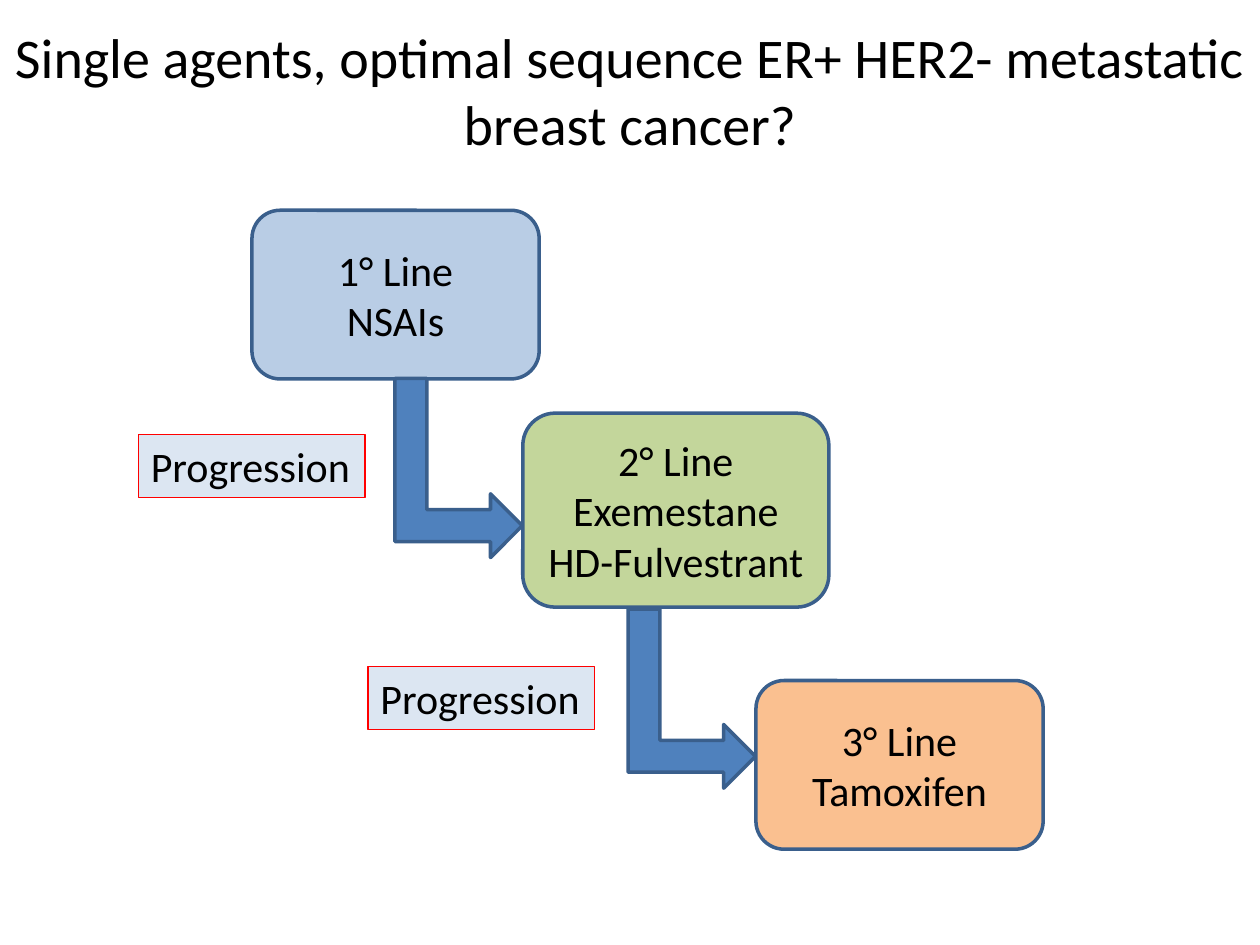
from dataclasses import dataclass

from pptx import Presentation
from pptx.dml.color import RGBColor
from pptx.enum.shapes import MSO_SHAPE
from pptx.enum.text import MSO_ANCHOR, MSO_AUTO_SIZE, PP_ALIGN
from pptx.shapes.autoshape import Shape
from pptx.slide import Slide
from pptx.util import Cm, Pt

OUTLINE = "3A5F8C"


@dataclass
class Area:
    left: float
    top: float
    width: float
    height: float

    def lengths(self) -> list[Cm]:
        return [Cm(value) for value in (self.left, self.top, self.width, self.height)]


@dataclass
class Therapy:
    area: Area
    fill: str
    text: str


THERAPIES = [
    Therapy(Area(5.08, 4.24, 5.79, 3.4), "B9CDE5", "1° Line\nNSAIs"),
    Therapy(Area(10.54, 8.33, 6.17, 3.91), "C3D69B", "2° Line\nExemestane\nHD-Fulvestrant"),
    Therapy(Area(15.24, 13.72, 5.79, 3.4), "FAC090", "3° Line\nTamoxifen"),
]
ARROWS = [Area(7.44, 8.15, 3.61, 2.57), Area(12.14, 12.8, 3.61, 2.57)]
LABELS = [Area(2.79, 8.76, 4.57, 1.27), Area(7.42, 13.44, 4.57, 1.27)]


def color(value: str) -> RGBColor:
    return RGBColor.from_string(value)


def add_box(page: Slide, kind: MSO_SHAPE, area: Area, fill: str,
            line: str = OUTLINE, line_width: float = 2) -> Shape:
    box = page.shapes.add_shape(kind, *area.lengths())
    box.shadow.inherit = False
    box.fill.solid()
    box.fill.fore_color.rgb = color(fill)
    box.line.color.rgb = color(line)
    box.line.width = Pt(line_width)
    return box


def write(box: Shape, text: str, size: int, align: PP_ALIGN, anchor: MSO_ANCHOR) -> None:
    frame = box.text_frame
    frame.text = text
    frame.word_wrap = True
    frame.vertical_anchor = anchor
    for para in frame.paragraphs:
        para.alignment = align
        for span in para.runs:
            span.font.name = "Calibri"
            span.font.size = Pt(size)
            span.font.color.rgb = color("000000")


def add_therapy(page: Slide, therapy: Therapy) -> None:
    box = add_box(page, MSO_SHAPE.ROUNDED_RECTANGLE, therapy.area, therapy.fill)
    write(box, therapy.text, 24, PP_ALIGN.CENTER, MSO_ANCHOR.MIDDLE)


def add_arrow(page: Slide, area: Area) -> None:
    arrow = add_box(page, MSO_SHAPE.BENT_UP_ARROW, area, "4F81BD")
    arrow.rotation = 90


def add_title(page: Slide, area: Area, text: str) -> None:
    box = page.shapes.add_textbox(*area.lengths())
    write(box, text, 32, PP_ALIGN.CENTER, MSO_ANCHOR.TOP)
    box.text_frame.auto_size = MSO_AUTO_SIZE.SHAPE_TO_FIT_TEXT


def add_label(page: Slide, area: Area, text: str) -> None:
    box = add_box(page, MSO_SHAPE.RECTANGLE, area, "DCE6F2", "FF0000", 0.75)
    write(box, text, 24, PP_ALIGN.LEFT, MSO_ANCHOR.TOP)
    box.text_frame.word_wrap = False
    box.text_frame.auto_size = MSO_AUTO_SIZE.SHAPE_TO_FIT_TEXT


def main() -> None:
    deck = Presentation()
    deck.slide_width, deck.slide_height = Cm(25.4), Cm(19.05)
    page = deck.slides.add_slide(deck.slide_layouts[6])

    # Treatment lines and the arrows between them
    for therapy in THERAPIES:
        add_therapy(page, therapy)
    for area in ARROWS:
        add_arrow(page, area)

    # Title
    add_title(page, Area(0, 0.33, 25.4, 3),
              "Single agents, optimal sequence ER+ HER2- metastatic breast cancer?")

    # Labels beside the arrows
    for area in LABELS:
        add_label(page, area, "Progression")

    deck.save("out.pptx")


if __name__ == "__main__":
    main()
